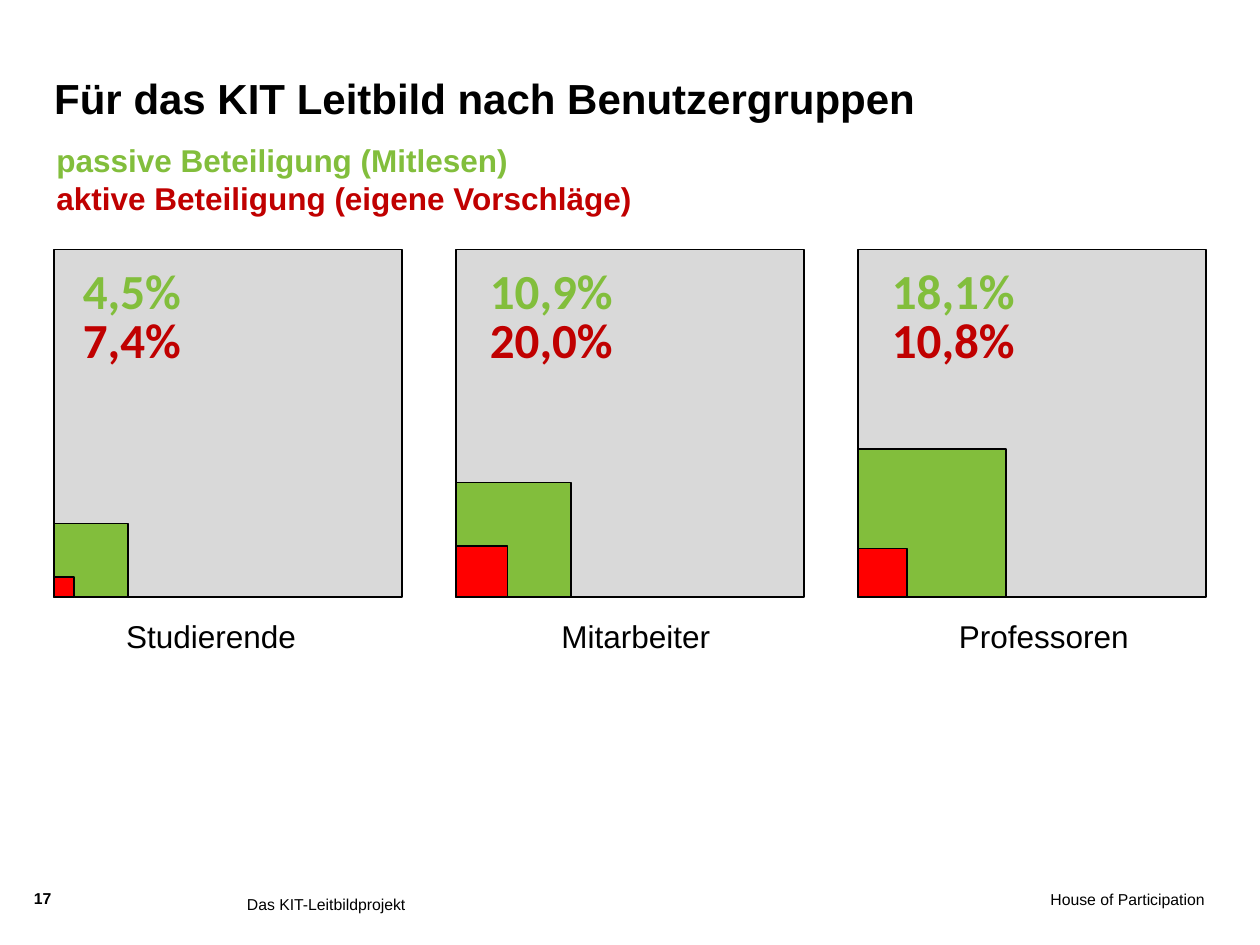
from dataclasses import dataclass
from math import sqrt

from pptx import Presentation
from pptx.dml.color import RGBColor
from pptx.enum.shapes import MSO_SHAPE
from pptx.enum.text import MSO_ANCHOR, PP_ALIGN
from pptx.util import Pt

RECTANGLE = MSO_SHAPE.RECTANGLE
TOP, MIDDLE, BOTTOM = MSO_ANCHOR.TOP, MSO_ANCHOR.MIDDLE, MSO_ANCHOR.BOTTOM
LEFT, CENTER, RIGHT, JUSTIFY = PP_ALIGN.LEFT, PP_ALIGN.CENTER, PP_ALIGN.RIGHT, PP_ALIGN.JUSTIFY


@dataclass(frozen=True)
class Theme:
    font: str = "Arial"
    number_font: str = "Calibri"
    black: str = "000000"
    gray: str = "D9D9D9"
    green: str = "82BE3C"
    red: str = "FF0000"
    dark_red: str = "C00000"
    title: int = 24
    number: int = 28
    body: int = 18
    footer: int = 9


THEME = Theme()
PADDING = (7.2, 3.6)
GROUP_LEFT, GROUP_TOP, GROUP_SIDE, GROUP_PITCH = 31, 142.6, 198.7, 229.7
GROUPS = [
    ("Studierende", 4.5, 7.4, 40.3, 51.1),
    ("Mitarbeiter", 10.9, 20.0, 272.9, 293.8),
    ("Professoren", 18.1, 10.8, 502.6, 527),
]


def add_text(page, bounds, lines, size, bold=False, font=THEME.font,
             align=LEFT, anchor=TOP, padding=(0, 0)):
    box = page.shapes.add_textbox(*(Pt(value) for value in bounds))
    frame = box.text_frame
    across, down = (Pt(value) for value in padding)
    frame_format = {
        "word_wrap": True, "vertical_anchor": anchor,
        "margin_left": across, "margin_right": across,
        "margin_top": down, "margin_bottom": down,
    }
    for name, value in frame_format.items():
        setattr(frame, name, value)
    for index, (text, color) in enumerate(lines):
        para = frame.add_paragraph() if index else frame.paragraphs[0]
        para.alignment = align
        span = para.add_run()
        span.text = text
        for name, value in {"name": font, "size": Pt(size), "bold": bold}.items():
            setattr(span.font, name, value)
        span.font.color.rgb = RGBColor.from_string(color)


def add_square(page, left, bottom, side, color):
    square = page.shapes.add_shape(RECTANGLE, Pt(left), Pt(bottom - side), Pt(side), Pt(side))
    square.shadow.inherit = False
    square.fill.solid()
    square.fill.fore_color.rgb = RGBColor.from_string(color)
    square.line.color.rgb = RGBColor.from_string(THEME.black)
    square.line.width = Pt(1)


def add_group(page, left, label, passive, active, number_left, label_left):
    bottom = GROUP_TOP + GROUP_SIDE
    passive_side = GROUP_SIDE * sqrt(passive / 100)
    active_side = passive_side * sqrt(active / 100)
    for side, color in [(GROUP_SIDE, THEME.gray), (passive_side, THEME.green),
                        (active_side, THEME.red)]:
        add_square(page, left, bottom, side, color)
    for top, share, color in [(145.4, passive, THEME.green), (173.5, active, THEME.dark_red)]:
        text = f"{share:.1f}%".replace(".", ",")
        add_text(page, (number_left, top, 95, 41), [(text, color)], THEME.number,
                 bold=True, font=THEME.number_font, padding=PADDING)
    add_text(page, (label_left, 355, 139, 17.3), [(label, THEME.black)], THEME.body,
             align=CENTER, anchor=MIDDLE)


def add_footer(page):
    add_text(page, (473, 508.3, 215.3, 28), [("House of Participation", THEME.black)],
             THEME.footer, align=RIGHT)
    add_text(page, (19.4, 507.6, 26, 17.3), [("17", THEME.black)], THEME.footer, bold=True)
    add_text(page, (134, 507.6, 334.8, 28), [("Das KIT-Leitbildprojekt", THEME.black)],
             THEME.footer, padding=PADDING)


def main():
    deck = Presentation()
    deck.slide_width, deck.slide_height = Pt(720), Pt(540)
    page = deck.slides.add_slide(deck.slide_layouts[6])
    add_text(page, (31, 26, 544.3, 44),
             [("Für das KIT Leitbild nach Benutzergruppen", THEME.black)],
             THEME.title, bold=True, anchor=BOTTOM)
    add_text(page, (25.2, 77, 453.6, 51),
             [("passive Beteiligung (Mitlesen)", THEME.green),
              ("aktive Beteiligung (eigene Vorschläge)", THEME.dark_red)],
             THEME.body, bold=True, align=JUSTIFY, padding=PADDING)
    for index, group in enumerate(GROUPS):
        add_group(page, GROUP_LEFT + index * GROUP_PITCH, *group)
    add_footer(page)
    deck.save("out.pptx")


if __name__ == "__main__":
    main()
